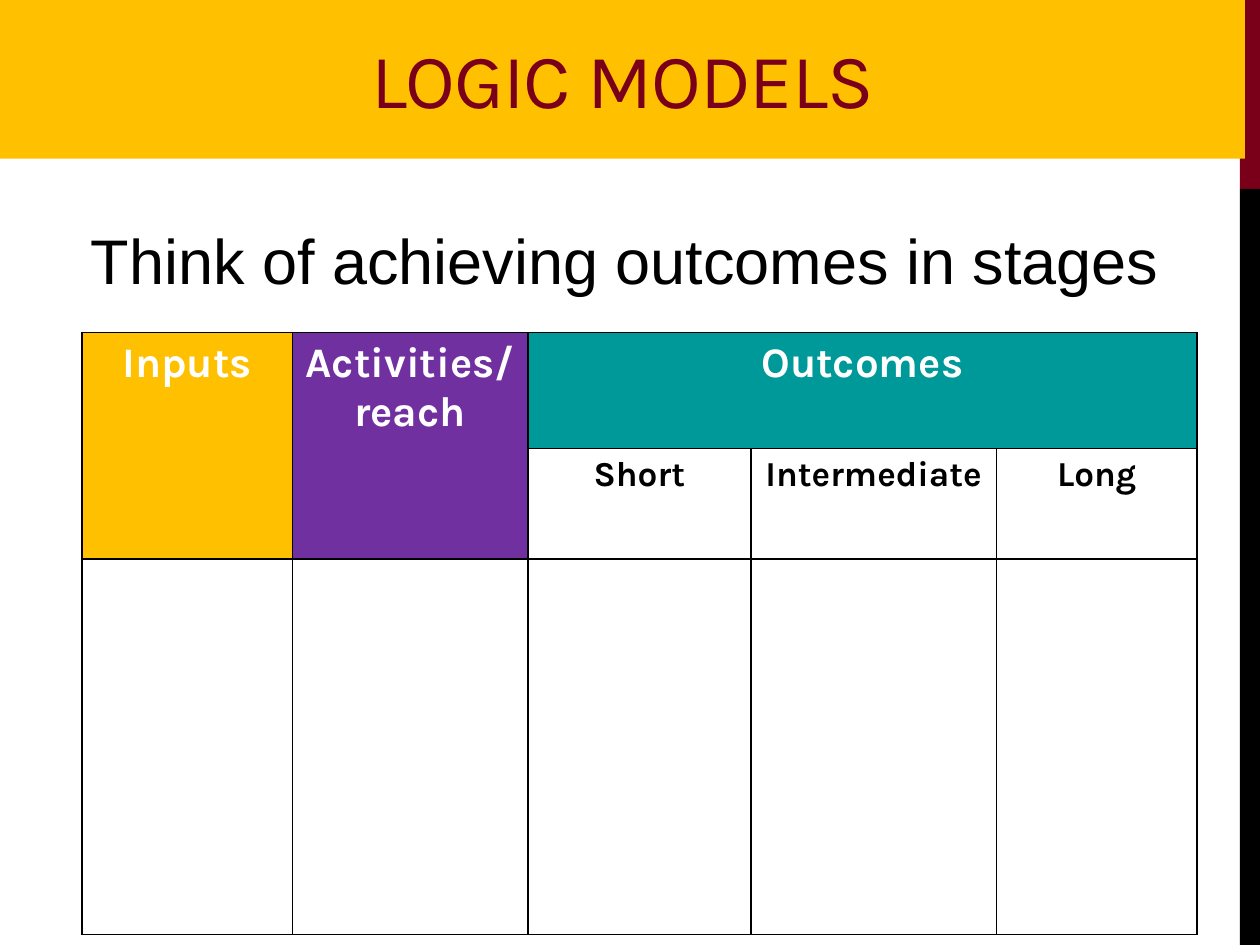
"""Build the logic models slide with its table of staged outcomes."""
from dataclasses import dataclass
from typing import Any, Optional

import lxml.etree
import pptx
import pptx.dml.color
import pptx.enum.shapes
import pptx.enum.text
import pptx.oxml.ns
import pptx.util

Inches = pptx.util.Inches
Pt = pptx.util.Pt
RGBColor = pptx.dml.color.RGBColor

MAROON = RGBColor(0x7A, 0x00, 0x19)
GOLD = RGBColor(0xFF, 0xC0, 0x00)
PURPLE = RGBColor(0x70, 0x30, 0xA0)
TEAL = RGBColor(0x00, 0x99, 0x99)
BLACK = RGBColor(0x00, 0x00, 0x00)
WHITE = RGBColor(0xFF, 0xFF, 0xFF)

COLUMN_WIDTHS = (1.67, 1.87, 1.77, 1.95, 1.59)
ROW_HEIGHTS = (0.92, 0.42, 2.98)


@dataclass(frozen=True)
class Block:
    left: float
    top: float
    width: float
    height: float
    color: RGBColor


@dataclass(frozen=True)
class Heading:
    row: int
    column: int
    text: str
    fill: Optional[RGBColor] = None
    row_span: int = 1
    column_span: int = 1


SIDE_BARS = (
    Block(9.84, 0, 0.16, 1.5, MAROON),
    Block(9.84, 1.5, 0.16, 6, BLACK),
)
TITLE_BAND = Block(0, -0.03, 9.88, 1.29, GOLD)
HEADINGS = (
    Heading(0, 0, "Inputs", GOLD, row_span=2),
    Heading(0, 1, "Activities/\nreach", PURPLE, row_span=2),
    Heading(0, 2, "Outcomes", TEAL, column_span=3),
    Heading(1, 2, "Short"),
    Heading(1, 3, "Intermediate"),
    Heading(1, 4, "Long"),
)


def write_text(frame: Any, text: str, color: RGBColor, **font_format: Any) -> None:
    """Fill a text frame with centred paragraphs in one format."""
    frame.text = text
    for para in frame.paragraphs:
        para.alignment = pptx.enum.text.PP_ALIGN.CENTER
        for span in para.runs:
            for name, value in font_format.items():
                setattr(span.font, name, value)
            span.font.color.rgb = color


def draw_block(page: Any, block: Block) -> Any:
    """Draw a plain filled rectangle."""
    shape = page.shapes.add_shape(
        pptx.enum.shapes.MSO_SHAPE.RECTANGLE,
        Inches(block.left), Inches(block.top), Inches(block.width), Inches(block.height),
    )
    shape.shadow.inherit = False
    shape.fill.solid()
    shape.fill.fore_color.rgb = block.color
    shape.line.fill.background()
    return shape


def draw_title(page: Any) -> None:
    """Draw the title band with slightly tightened lettering."""
    frame = draw_block(page, TITLE_BAND).text_frame
    frame.vertical_anchor = pptx.enum.text.MSO_ANCHOR.MIDDLE
    write_text(frame, "LOGIC MODELS", MAROON, name="Karla", size=Pt(44))
    frame.paragraphs[0].runs[0].font._element.set("spc", "-60")


def draw_subtitle(page: Any) -> None:
    """Draw the sentence above the table."""
    box = page.shapes.add_textbox(Inches(0.42), Inches(1.71), Inches(9.08), Inches(0.71))
    box.text_frame.word_wrap = True
    box.text_frame.auto_size = pptx.enum.text.MSO_AUTO_SIZE.SHAPE_TO_FIT_TEXT
    write_text(box.text_frame, "Think of achieving outcomes in stages", BLACK,
               name="Arial", size=Pt(36))


def add_borders(cell: Any) -> None:
    """Give a cell thin black borders on all four sides."""
    properties = cell._tc.get_or_add_tcPr()
    qualified = pptx.oxml.ns.qn
    for side in ("a:lnL", "a:lnR", "a:lnT", "a:lnB"):
        line = lxml.etree.SubElement(properties, qualified(side), w=str(Pt(1)))
        fill = lxml.etree.SubElement(line, qualified("a:solidFill"))
        lxml.etree.SubElement(fill, qualified("a:srgbClr"), val=str(BLACK))


def draw_table(page: Any) -> None:
    """Draw the logic model table."""
    table = page.shapes.add_table(
        len(ROW_HEIGHTS), len(COLUMN_WIDTHS), Inches(0.65), Inches(2.64),
        Inches(sum(COLUMN_WIDTHS)), Inches(sum(ROW_HEIGHTS)),
    ).table
    table.first_row = table.horz_banding = False
    for column, width in zip(table.columns, COLUMN_WIDTHS):
        column.width = Inches(width)
    for row, height in zip(table.rows, ROW_HEIGHTS):
        row.height = Inches(height)
    for cell in table.iter_cells():
        add_borders(cell)
        cell.fill.background()
    for heading in HEADINGS:
        cell = table.cell(heading.row, heading.column)
        if heading.row_span > 1 or heading.column_span > 1:
            cell.merge(table.cell(heading.row + heading.row_span - 1,
                                  heading.column + heading.column_span - 1))
        if heading.fill is not None:
            cell.fill.solid()
            cell.fill.fore_color.rgb = heading.fill
        color, size = (BLACK, 20) if heading.fill is None else (WHITE, 24)
        write_text(cell.text_frame, heading.text, color,
                   name="Karla", size=Pt(size), bold=True)


def main() -> None:
    """Build and save the deck."""
    deck = pptx.Presentation()
    deck.slide_width, deck.slide_height = Inches(10), Inches(7.5)
    page = deck.slides.add_slide(deck.slide_layouts[6])
    for bar in SIDE_BARS:
        draw_block(page, bar)
    draw_table(page)
    draw_subtitle(page)
    draw_title(page)
    deck.save("out.pptx")


if __name__ == "__main__":
    main()
